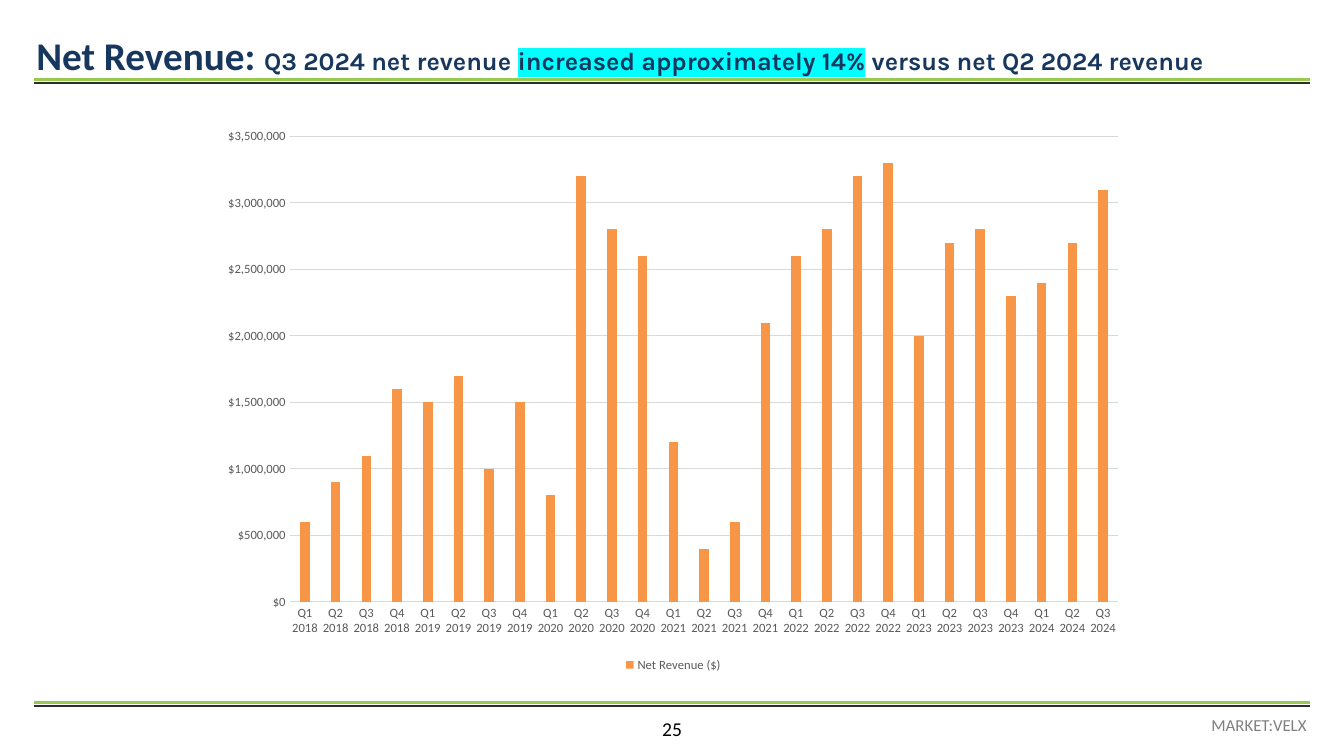
import pptx
import pptx.chart.data
import pptx.dml.color
import pptx.enum.chart
import pptx.enum.shapes
import pptx.enum.text
import pptx.oxml.ns
import pptx.util
from lxml import etree

RGBColor = pptx.dml.color.RGBColor
NAVY = RGBColor(0x17, 0x37, 0x5E)
GREEN = RGBColor(0x97, 0xCB, 0x4F)
CHARCOAL = RGBColor(0x2D, 0x2D, 0x2D)
CYAN = RGBColor(0x00, 0xFF, 0xFF)
GRAY = RGBColor(0x80, 0x80, 0x80)
BLACK = RGBColor(0x00, 0x00, 0x00)
ORANGE = RGBColor(0xF7, 0x96, 0x46)
AXIS_TEXT = RGBColor(0x59, 0x59, 0x59)
AXIS_LINE = RGBColor(0xD9, 0xD9, 0xD9)

REVENUE = [
    600000, 900000, 1100000, 1600000,
    1500000, 1700000, 1000000, 1500000,
    800000, 3200000, 2800000, 2600000,
    1200000, 400000, 600000, 2100000,
    2600000, 2800000, 3200000, 3300000,
    2000000, 2700000, 2800000, 2300000,
    2400000, 2700000, 3100000,
]


class SlideBuilder:
    COLUMNS, ROWS = 40, 30
    BODY_FONT, HEADLINE_FONT = "Calibri", "Karla"

    def __init__(self, deck):
        self.slide = deck.slides.add_slide(deck.slide_layouts[6])
        self.column = deck.slide_width / self.COLUMNS
        self.row = deck.slide_height / self.ROWS

    def place(self, left, top, width, height):
        return (round(left * self.column), round(top * self.row),
                round(width * self.column), round(height * self.row))

    def rule(self, row, color, weight):
        start_x, y, end_x, _ = self.place(1, row, self.COLUMNS - 1, 0)
        line = self.slide.shapes.add_connector(
            pptx.enum.shapes.MSO_CONNECTOR.STRAIGHT, start_x, y, end_x, y)
        line.line.color.rgb = color
        line.line.width = pptx.util.Pt(weight)
        etree.SubElement(line._element.spPr, pptx.oxml.ns.qn("a:effectLst"))

    def double_rule(self, row):
        self.rule(row, GREEN, 2)
        self.rule(row + 0.12, CHARCOAL, 1.5)

    def text_box(self, box, insets, wrap=True):
        frame = self.slide.shapes.add_textbox(*self.place(*box)).text_frame
        frame.word_wrap = wrap
        frame.margin_left, frame.margin_top, frame.margin_right, frame.margin_bottom = (
            pptx.util.Inches(inset) for inset in insets)
        return frame

    def label(self, text, box, size, color, insets, wrap=True):
        paragraph = self.text_box(box, insets, wrap).paragraphs[0]
        paragraph.text = text
        paragraph.font.size = pptx.util.Pt(size)
        paragraph.font.name = self.BODY_FONT
        paragraph.font.color.rgb = color

    def title(self, lead, headline, box):
        frame = self.text_box(box, (0.11, 0.06, 0.11, 0.06))
        frame.vertical_anchor = pptx.enum.text.MSO_ANCHOR.BOTTOM
        paragraph = frame.paragraphs[0]
        paragraph.font.bold = True
        paragraph.font.color.rgb = NAVY
        self.title_run(paragraph, lead, 28, self.BODY_FONT)
        for phrase, highlight in headline:
            self.title_run(paragraph, phrase, 18, self.HEADLINE_FONT, highlight)

    def title_run(self, paragraph, text, size, font, highlight=None):
        run = paragraph.add_run()
        run.text = text
        run.font.size = pptx.util.Pt(size)
        if highlight is not None:
            marker = etree.SubElement(run.font._element, pptx.oxml.ns.qn("a:highlight"))
            etree.SubElement(marker, pptx.oxml.ns.qn("a:srgbClr"), val=str(highlight))
        run.font.name = font

    def style_font(self, font, size, color):
        font.name = self.BODY_FONT
        font.size = pptx.util.Pt(size)
        font.color.rgb = color

    def column_chart(self, name, categories, values, box):
        data = pptx.chart.data.CategoryChartData(number_format='"$"#,##0')
        data.categories = categories
        data.add_series(name, values)
        chart = self.slide.shapes.add_chart(
            pptx.enum.chart.XL_CHART_TYPE.COLUMN_CLUSTERED, *self.place(*box), data).chart
        chart.has_title = False
        self.style_font(chart.font, 10, BLACK)

        plot = chart.plots[0]
        plot.gap_width, plot.overlap = 219, -27
        plot.vary_by_categories = False
        bars = plot.series[0].format.fill
        bars.solid()
        bars.fore_color.rgb = ORANGE

        chart.has_legend = True
        chart.legend.position = pptx.enum.chart.XL_LEGEND_POSITION.BOTTOM
        chart.legend.include_in_layout = False
        self.style_font(chart.legend.font, 9, AXIS_TEXT)

        for axis in (chart.category_axis, chart.value_axis):
            axis.major_tick_mark = pptx.enum.chart.XL_TICK_MARK.NONE
            axis.minor_tick_mark = pptx.enum.chart.XL_TICK_MARK.NONE
            self.style_font(axis.tick_labels.font, 9, AXIS_TEXT)

        amounts = chart.value_axis
        amounts.minimum_scale, amounts.maximum_scale = 0, 3500000
        amounts.major_unit = 500000
        amounts.tick_labels.number_format = '"$"#,##0'
        amounts.tick_labels.number_format_is_linked = False
        amounts.format.line.fill.background()
        for line in (chart.category_axis.format.line, amounts.major_gridlines.format.line):
            line.color.rgb = AXIS_LINE
            line.width = pptx.util.Pt(0.75)


def main():
    deck = pptx.Presentation()
    deck.slide_width = pptx.util.Inches(13.33)
    deck.slide_height = pptx.util.Inches(7.5)
    builder = SlideBuilder(deck)

    for row in (3.16, 27.88):
        builder.double_rule(row)

    headline = [
        ("Q3 2024 net revenue ", None),
        ("increased approximately 14%", CYAN),
        (" versus net Q2 2024 revenue", None),
    ]
    builder.title("Net Revenue: ", headline, (0.75, 0.64, 39.75, 2.72))
    builder.label("MARKET:VELX", (35.76, 28.16, 3.57, 1.2), 12, GRAY,
                  (0.1, 0.05, 0.1, 0.05), wrap=False)
    builder.label("25", (19.62, 28.44, 0.78, 0.96), 14, BLACK, (0.03, 0, 0, 0))

    quarters = [f"Q{index % 4 + 1} {2018 + index // 4}" for index in range(len(REVENUE))]
    builder.column_chart("Net Revenue ($)", quarters, REVENUE, (6.24, 4.68, 27.6, 22.16))

    deck.save("out.pptx")


if __name__ == "__main__":
    main()
